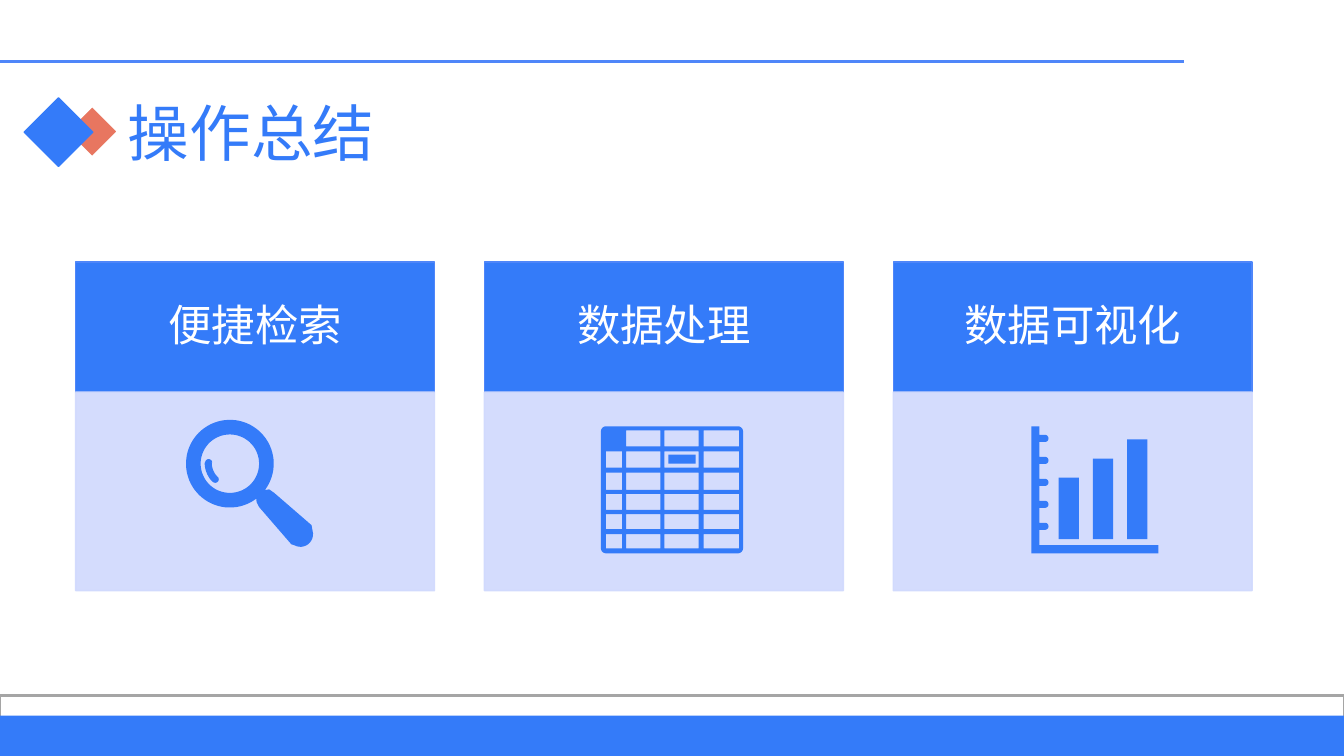
"""Build the summary slide with three titled icon cards."""
import math
from dataclasses import dataclass
from typing import Optional

from lxml import etree
from pptx import Presentation
from pptx import util as u
from pptx.dml.color import RGBColor
from pptx.enum import shapes, text
from pptx.oxml.ns import qn

BLUE = RGBColor(0x34, 0x7B, 0xF9)
EDGE = RGBColor(0x4F, 0x86, 0xF9)
PALE = RGBColor(0xD0, 0xD9, 0xFD)
CORAL = RGBColor(0xE8, 0x76, 0x60)
GREY = RGBColor(0xA5, 0xA5, 0xA5)
WHITE = RGBColor(0xFF, 0xFF, 0xFF)

RECT = shapes.MSO_SHAPE.RECTANGLE
DIAMOND = shapes.MSO_SHAPE.DIAMOND
Point = tuple[float, float]
Contour = list[Point]

CARD_LEFT, CARD_TOP, CARD_WIDTH, CARD_PITCH = 0.75, 2.6, 3.56, 4.055
HEADER_HEIGHT, BODY_HEIGHT = 1.29, 1.97
CARD_TITLES = ("便捷检索", "数据处理", "数据可视化")


@dataclass(frozen=True)
class Block:
    """A preset shape with its place, fill and outline."""
    kind: shapes.MSO_SHAPE
    left: float
    top: float
    width: float
    height: float
    fill: RGBColor
    line: Optional[RGBColor] = None
    weight: float = 1
    opacity: int = 100


BACKDROP = (
    Block(RECT, 0, 6.9, 13.33, 0.6, WHITE, GREY, 1.5),
    Block(RECT, 0, 7.1, 13.33, 0.4, BLUE),
    Block(DIAMOND, 0.66, 1.05, 0.51, 0.51, CORAL, WHITE, 1.5),
    Block(DIAMOND, 0.24, 0.97, 0.68, 0.68, BLUE, BLUE),
)


def add_block(s, block: Block):
    """Draw a block and return its shape."""
    sp = s.shapes.add_shape(block.kind, *map(u.Inches, (
        block.left, block.top, block.width, block.height)))
    sp.shadow.inherit = False
    sp.fill.solid()
    sp.fill.fore_color.rgb = block.fill
    if block.line is None:
        sp.line.fill.background()
    else:
        sp.line.color.rgb = block.line
        sp.line.width = u.Pt(block.weight)
    if block.opacity < 100:
        for color in sp._element.spPr.iter(qn("a:srgbClr")):
            etree.SubElement(color, qn("a:alpha"), val=str(block.opacity * 1000))
    return sp


def write_text(sp, content: str, *, size: float, font: str, color: RGBColor,
               align=text.PP_ALIGN.LEFT, inset: Point = (0.1, 0.05)) -> None:
    """Write one vertically centred paragraph into a shape."""
    tf = sp.text_frame
    tf.word_wrap = True
    tf.vertical_anchor = text.MSO_ANCHOR.MIDDLE
    tf.margin_left = tf.margin_right = u.Inches(inset[0])
    tf.margin_top = tf.margin_bottom = u.Inches(inset[1])
    p = tf.paragraphs[0]
    p.alignment = align
    p.line_spacing = 0.9
    r = p.add_run()
    r.text = content
    r.font.size = u.Pt(size)
    r.font.name = font
    r.font.color.rgb = color
    etree.SubElement(r._r.get_or_add_rPr(), qn("a:ea"), typeface=font)


def add_rule(s, left: float, right: float, y: float) -> None:
    """Draw the horizontal rule above the title."""
    sp = s.shapes.add_connector(shapes.MSO_CONNECTOR.STRAIGHT,
                                *map(u.Inches, (left, y, right, y)))
    sp.line.color.rgb = EDGE
    sp.line.width = u.Pt(2.25)
    etree.SubElement(sp._element.spPr, qn("a:effectLst"))


def add_icon(s, contours: list[Contour]) -> None:
    """Draw closed contours as one blue outline shape."""
    scaled = [[(u.Inches(x), u.Inches(y)) for x, y in c] for c in contours]
    builder = s.shapes.build_freeform(*scaled[0][0])
    for contour in scaled:
        builder.move_to(*contour[0])
        builder.add_line_segments(contour[1:], close=True)
    sp = builder.convert_to_shape()
    sp.shadow.inherit = False
    sp.fill.solid()
    sp.fill.fore_color.rgb = BLUE
    sp.line.fill.background()


def arc(x: float, y: float, radius: float, start: float, end: float,
        steps: int = 12) -> Contour:
    """Return points on an arc, with angles in degrees."""
    angles = (math.radians(start + (end - start) * i / steps) for i in range(steps + 1))
    return [(x + radius * math.cos(a), y + radius * math.sin(a)) for a in angles]


def box(left: float, top: float, right: float, bottom: float) -> Contour:
    """Return the corners of a rectangle."""
    return [(left, top), (right, top), (right, bottom), (left, bottom)]


def magnifier() -> list[Contour]:
    """Return the search icon: lens with handle, lens hole and glint."""
    x, y = 2.28, 4.6
    handle = [(2.67, 4.855), (2.72, 4.89), (3.09, 5.21),
              *arc(2.98, 5.3, 0.125, -15, 120), (2.89, 5.4), (2.57, 5.03), (2.545, 4.98)]
    glint = (arc(2.07, 4.59, 0.035, 180, 360) + arc(2.3, 4.59, 0.2, 180, 135)
             + arc(2.135, 4.755, 0.035, -45, 135) + arc(2.3, 4.59, 0.27, 135, 180))
    return [arc(x, y, 0.435, 53, 397, 72) + handle, arc(x, y, 0.29, 0, 360, 60), glint]


def spreadsheet() -> list[Contour]:
    """Return the table icon: rounded frame, open cells and one marked cell."""
    columns = ((6.01, 6.17), (6.21, 6.55), (6.59, 6.93), (6.98, 7.33))
    rows = ((4.27, 4.43), (4.48, 4.64), (4.69, 4.86),
            (4.9, 5.06), (5.1, 5.25), (5.3, 5.44))
    corners = ((6.01, 4.28, 180), (7.32, 4.28, 270), (7.32, 5.44, 0), (6.01, 5.44, 90))
    frame = [pt for x, y, a in corners for pt in arc(x, y, 0.05, a, a + 90, 6)]
    cells = [box(left, top, right, bottom)
             for i, (left, right) in enumerate(columns)
             for j, (top, bottom) in enumerate(rows) if i or j]
    return [frame, *cells, box(6.63, 4.51, 6.9, 4.6)]


def bar_chart() -> list[Contour]:
    """Return the chart icon: axes with round ticks and three bars."""
    axes = [(10.23, 4.23), (10.31, 4.23)]
    for i in range(5):
        y = 4.35 + 0.218 * i
        axes += [(10.31, y - 0.035), *arc(10.365, y, 0.035, -90, 90), (10.31, y + 0.035)]
    axes += [(10.31, 5.41), (11.49, 5.41), (11.49, 5.49), (10.23, 5.49)]
    bars = [box(10.5 + 0.34 * i, 4.74 - 0.19 * i, 10.7 + 0.34 * i, 5.35)
            for i in range(3)]
    return [axes, *bars]


def add_card(s, left: float, title: str) -> None:
    """Draw a card with its header and pale body."""
    header = add_block(s, Block(RECT, left, CARD_TOP, CARD_WIDTH, HEADER_HEIGHT, BLUE, EDGE))
    write_text(header, title, size=31, font="Arial", color=WHITE,
               align=text.PP_ALIGN.CENTER, inset=(0.24, 0.14))
    add_block(s, Block(RECT, left, CARD_TOP + HEADER_HEIGHT, CARD_WIDTH, BODY_HEIGHT,
                       PALE, PALE, opacity=90))


def main() -> None:
    """Build and save the slide."""
    prs = Presentation()
    prs.slide_width, prs.slide_height = u.Inches(13.33), u.Inches(7.5)
    s = prs.slides.add_slide(prs.slide_layouts[6])
    for block in BACKDROP:
        add_block(s, block)
    add_rule(s, 0, 11.74, 0.61)
    title = s.shapes.add_textbox(*map(u.Inches, (1.17, 0.85, 11.25, 1)))
    write_text(title, "操作总结", size=44, font="Noto Sans CJK SC", color=BLUE)
    for i, card_title in enumerate(CARD_TITLES):
        add_card(s, CARD_LEFT + CARD_PITCH * i, card_title)
    for icon in (magnifier(), spreadsheet(), bar_chart()):
        add_icon(s, icon)
    prs.save("out.pptx")


if __name__ == "__main__":
    main()
